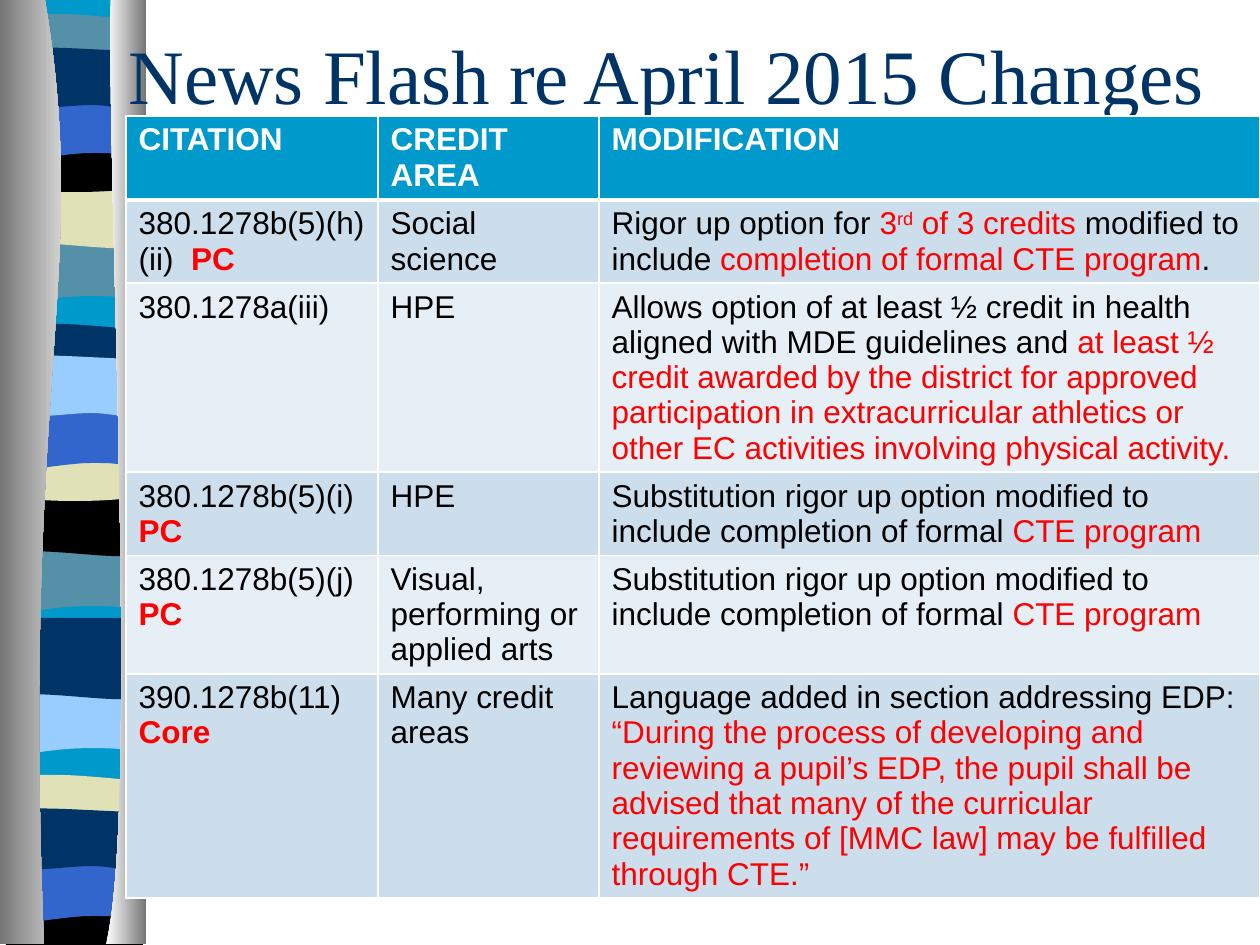
from lxml import etree
from pptx import Presentation
from pptx.dml.color import RGBColor
from pptx.enum.text import MSO_ANCHOR, MSO_AUTO_SIZE, PP_ALIGN
from pptx.oxml.ns import qn
from pptx.util import Emu, Pt

LEFT, MIDDLE, NO_FIT = PP_ALIGN.LEFT, MSO_ANCHOR.MIDDLE, MSO_AUTO_SIZE.NONE
SCALE = 914400 / 126
TITLE_ONLY = 5

# Content
TITLE = "News Flash re April 2015 Changes"
HEADINGS = ["CITATION", "CREDIT  AREA", "MODIFICATION"]
SUBSTITUTION = [[("Substitution rigor up option modified to include completion of formal ", ""),
                 ("CTE program", "red")]]
# Each cell is a list of paragraphs, each paragraph a list of (text, style) runs
CHANGES = [
    ([[("380.1278b(5)(h)", "")], [("(ii)  ", ""), ("PC", "tag")]],
     [[("Social science", "")]],
     [[("Rigor up option for ", ""), ("3", "red"), ("rd", "superscript"),
       (" of 3 credits ", "red"), ("modified to include ", ""),
       ("completion of formal CTE program", "red"), (".", "")]]),
    ([[("380.1278a(iii)", "")]],
     [[("HPE", "")]],
     [[("Allows option of at least ½ credit in health aligned with MDE guidelines and ", ""),
       ("at least ½ credit awarded by the district for approved participation in "
        "extracurricular athletics or other EC activities involving physical activity.", "red")]]),
    ([[("380.1278b(5)(i)", "")], [("PC", "tag")]], [[("HPE", "")]], SUBSTITUTION),
    ([[("380.1278b(5)(j)", "")], [("PC", "tag")]],
     [[("Visual, performing or applied arts", "")]], SUBSTITUTION),
    ([[("390.1278b(11)", "")], [("Core", "tag")]],
     [[("Many credit areas", "")]],
     [[("Language added in section addressing EDP:", "")],
      [("“During the process of developing and reviewing a pupil’s EDP, the pupil shall be "
        "advised that many of the curricular requirements of [MMC law] may be fulfilled "
        "through CTE.”", "red")]]),
]
COLUMN_WIDTHS = [252, 221, 661]
HEADER_HEIGHT, ROW_HEIGHT, TABLE_HEIGHT = 84, 52, 832  # rows grow with their text

# Ribbon outlines: one point is a straight line, three points are a cubic curve
L, R = 6, 143
OUTLINES = {
    "dip": [[(R, 0)], [(R, 66)], [(49, 56), (30, 76), (L, 66)], [(L, 0)]],
    "swell": [[(R, -11)], [(R, 67)], [(121, 77), (49, 60), (L, 67)], [(L, -11)]],
    "bowl": [[(R, 0)], [(R, 37)], [(121, 42), (30, 42), (L, 37)], [(L, 0)],
             [(15, -7), (37, -6), (59, -6)], [(82, -6), (126, -1), (R, 0)]],
    "crest": [[(R, 0)], [(R, 50)], [(121, 58), (30, 58), (L, 50)], [(L, 0)],
              [(91, 6), (115, 0), (R, 0)]],
    "arch": [[(R, 0)], [(R, 68)], [(122, 60), (113, 60), (91, 60)],
             [(68, 60), (28, 68), (L, 68)], [(L, 0)]],
    "wave": [[(R, -1)], [(R, 53)], [(135, 61), (113, 53), (91, 53)],
             [(68, 53), (21, 61), (L, 53)], [(L, -1)], [(26, -9), (100, -1), (R, -1)]],
    "base": [[(R, 0)], [(R, 941)], [(L, 941)], [(L, 0)]],
    "left edge": [[(45, 0)], [(91, 272), (21, 373), (44, 944)], [(0, 944)], [(0, 0)]],
    "right edge": [[(111, 0)], [(106, 158), (140, 814), (106, 944)], [(146, 944)], [(146, 0)]],
}
AQUA, TEAL, SAND, NAVY = "0099CC", "5490A8", "E1E1B7", "003366"
BLUE, SKY, BLACK, WHITE, GREY, RED = "3366CC", "99CCFF", "000000", "FFFFFF", "767676", "FF0000"
BANDS = [
    ("base", 0, [AQUA]),
    ("dip", 233, [TEAL]), ("swell", 178, [SAND]), ("bowl", 20, [TEAL]),
    ("crest", 136, [BLACK]), ("arch", 93, [BLUE]), ("wave", 52, [NAVY]),
    ("dip", 543, [TEAL]), ("swell", 486, [BLACK]), ("bowl", 330, [NAVY]),
    ("crest", 445, [SAND]), ("arch", 403, [BLUE]), ("wave", 360, [SKY]),
    ("dip", 685, [SKY]), ("swell", 629, [NAVY]), ("bowl", 781, [SAND]),
    ("crest", 897, [BLACK]), ("arch", 856, [BLUE]), ("wave", 813, [NAVY]),
    ("left edge", 0, [GREY, WHITE]), ("right edge", 0, [WHITE, GREY]),
]


def px(length):
    return Emu(round(length * SCALE))


def rgb(color):
    return RGBColor.from_string(color)


def bend(shape, outline):
    """Turn each run of three straight lines that stands for a curve into a cubic."""
    lines = iter(list(shape._element.iter(qn("a:lnTo"))))
    for segment in outline[1:]:
        parts = [next(lines) for _ in segment]
        if len(parts) == 3:
            cubic = etree.Element(qn("a:cubicBezTo"))
            parts[0].addprevious(cubic)
            for part in parts:
                cubic.append(part[0])
                part.getparent().remove(part)


def add_band(shapes, name, top, colors):
    outline = OUTLINES[name]
    points = [(px(x), px(y + top)) for segment in outline for x, y in segment]
    builder = shapes.build_freeform(*points[0])
    builder.add_line_segments(points[1:], close=True)
    band = builder.convert_to_shape()
    bend(band, outline)
    band.shadow.inherit = False
    band.line.fill.background()
    if len(colors) == 1:
        band.fill.solid()
        band.fill.fore_color.rgb = rgb(colors[0])
    else:
        band.fill.gradient()
        band.fill.gradient_angle = 0
        for position, (stop, color) in enumerate(zip(band.fill.gradient_stops, colors)):
            stop.position = position
            stop.color.rgb = rgb(color)


def add_run(paragraph, text, size, font, color, bold=False):
    run = paragraph.add_run()
    run.text = text
    run.font.size, run.font.name, run.font.bold = Pt(size), font, bold
    run.font.color.rgb = rgb(color)
    return run


def fill_cell(cell, paragraphs, fill, header=False):
    cell.fill.solid()
    cell.fill.fore_color.rgb = rgb(fill)
    frame = cell.text_frame
    for number, runs in enumerate(paragraphs):
        paragraph = frame.add_paragraph() if number else frame.paragraphs[0]
        for text, style in runs:
            color = WHITE if header else RED if style else BLACK
            run = add_run(paragraph, text, 18, "Arial", color, header or style == "tag")
            if style == "superscript":
                run.font._element.set("baseline", "30000")
    # White borders, heavier below the header
    properties = cell._tc.get_or_add_tcPr()
    for index, side in enumerate(("lnL", "lnR", "lnT", "lnB")):
        width = Pt(3 if header and side == "lnB" else 1)
        border = etree.Element(qn("a:" + side), w=str(width))
        solid = etree.SubElement(border, qn("a:solidFill"))
        etree.SubElement(solid, qn("a:srgbClr"), val=WHITE)
        properties.insert(index, border)


prs = Presentation()
prs.slide_width, prs.slide_height = px(1260), px(945)
slide = prs.slides.add_slide(prs.slide_layouts[TITLE_ONLY])
shapes = slide.shapes

# Ribbon down the left side
for band in BANDS:
    add_band(shapes, *band)

# Title, brought in front of the ribbon
title = shapes.title
title.left, title.top, title.width, title.height = px(116), px(0), px(1144), px(147)
title.text_frame.auto_size = NO_FIT
title.text_frame.vertical_anchor = MIDDLE
heading = title.text_frame.paragraphs[0]
heading.alignment = LEFT
add_run(heading, TITLE, 44, "Times New Roman", NAVY)
shapes._spTree.append(title._element)

# Table of changes
table_frame = shapes.add_table(len(CHANGES) + 1, len(HEADINGS), px(126), px(116),
                               px(sum(COLUMN_WIDTHS)), px(TABLE_HEIGHT))
table = table_frame.table
for column, width in zip(table.columns, COLUMN_WIDTHS):
    column.width = px(width)
for number, row in enumerate(table.rows):
    row.height = px(ROW_HEIGHT if number else HEADER_HEIGHT)
table_frame.height = px(TABLE_HEIGHT)
for column, text in enumerate(HEADINGS):
    fill_cell(table.cell(0, column), [[(text, "")]], AQUA, header=True)
for row, change in enumerate(CHANGES, 1):
    for column, paragraphs in enumerate(change):
        fill_cell(table.cell(row, column), paragraphs, "CCDEEC" if row % 2 else "E7EFF6")

prs.save("out.pptx")
